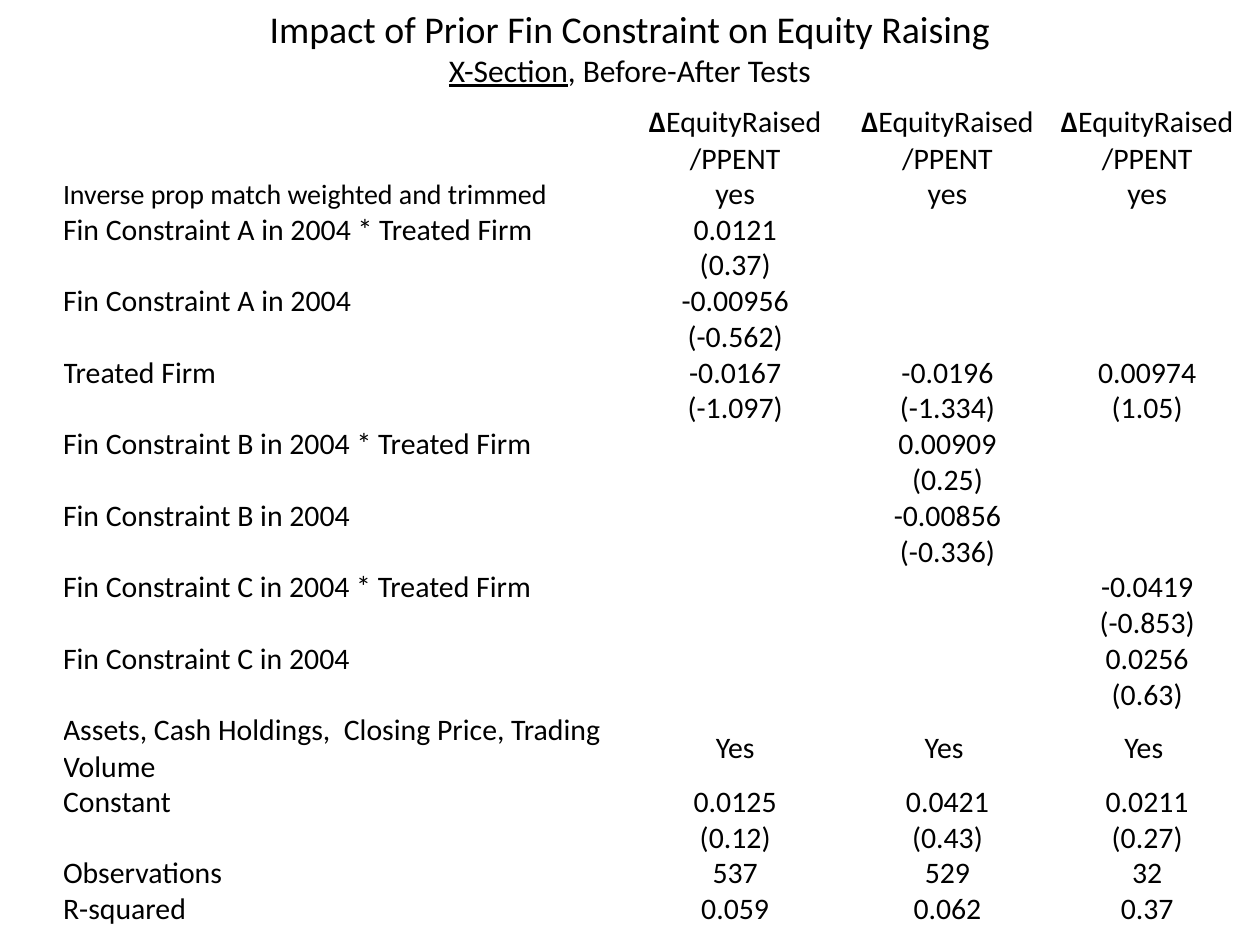
from dataclasses import dataclass

from pptx import Presentation
from pptx import util as u
from pptx.dml.color import RGBColor
from pptx.enum import text


@dataclass(frozen=True)
class Theme:
    font: str = "Calibri"
    ink: RGBColor = RGBColor(0, 0, 0)
    title: float = 21.6
    subtitle: float = 18
    body: float = 17
    note: float = 16


THEME = Theme()
COL_WIDTHS = (4.5, 1.67, 1.7, 1.47)
HEADER_HEIGHT, ROW_HEIGHT = 0.56, 0.21

MATCHING = ("Inverse prop match weighted and trimmed", "yes", "yes", "yes")
CONTROLS = ("Assets, Cash Holdings,  Closing Price, Trading Volume",
            "Yes", "Yes ", "Yes ")

# Each variable: label, coefficients, t-statistics (one per regression)
VARIABLES = [
    ("Fin Constraint A in 2004 * Treated Firm", ("0.0121", "", ""), ("(0.37)", "", "")),
    ("Fin Constraint A in 2004", ("-0.00956", "", ""), ("(-0.562)", "", "")),
    ("Treated Firm", ("-0.0167", "-0.0196", "0.00974"), ("(-1.097)", "(-1.334)", "(1.05)")),
    ("Fin Constraint B in 2004 * Treated Firm", ("", "0.00909", ""), ("", "(0.25)", "")),
    ("Fin Constraint B in 2004", ("", "-0.00856", ""), ("", "(-0.336)", "")),
    ("Fin Constraint C in 2004 * Treated Firm", ("", "", "-0.0419"), ("", "", "(-0.853)")),
    ("Fin Constraint C in 2004", ("", "", "0.0256"), ("", "", "(0.63)")),
]
CONSTANT = [("Constant", ("0.0125", "0.0421", "0.0211"), ("(0.12)", "(0.43)", "(0.27)"))]
FIT = [
    ("Observations", "537", "529", "32"),
    ("R-squared", "0.059", "0.062", "0.37"),
]


def style(font, size):
    font.name = THEME.font
    font.size = u.Pt(size)
    font.color.rgb = THEME.ink


def add_run(p, content, size=None, bold=None, underline=None):
    r = p.add_run()
    r.text = content
    if size:
        r.font.size = u.Pt(size)
    r.font.bold = bold
    r.font.underline = underline


def add_title(s):
    sp = s.shapes.add_textbox(u.Inches(0.5), 0, u.Inches(9), u.Inches(0.75))
    tf = sp.text_frame
    tf.word_wrap = True
    tf.vertical_anchor = text.MSO_ANCHOR.MIDDLE
    p = tf.paragraphs[0]
    p.alignment = text.PP_ALIGN.CENTER
    style(p.font, THEME.subtitle)
    add_run(p, "Impact of Prior Fin Constraint on Equity Raising", size=THEME.title)
    p.add_line_break()
    add_run(p, "X-Section", underline=True)
    add_run(p, ", Before-After Tests")


def format_paragraph(p, centred, size=THEME.body):
    p.alignment = text.PP_ALIGN.CENTER if centred else text.PP_ALIGN.LEFT
    style(p.font, size)


def prepare_cell(cell, anchor=text.MSO_ANCHOR.BOTTOM):
    cell.fill.background()
    cell.margin_left = cell.margin_right = cell.margin_top = cell.margin_bottom = 0
    cell.vertical_anchor = anchor


def fill_header(cells):
    for col, cell in enumerate(cells):
        prepare_cell(cell)
        tf = cell.text_frame
        p = tf.paragraphs[0]
        format_paragraph(p, centred=True)
        if col:
            add_run(p, "Δ", bold=True)
            add_run(p, "EquityRaised")
            p = tf.add_paragraph()
            format_paragraph(p, centred=True)
            add_run(p, "/PPENT")


def fill_row(cells, values):
    flagged = values in (MATCHING, CONTROLS)
    for col, (cell, value) in enumerate(zip(cells, values)):
        middle = flagged and col > 0
        prepare_cell(cell, text.MSO_ANCHOR.MIDDLE if middle else text.MSO_ANCHOR.BOTTOM)
        p = cell.text_frame.paragraphs[0]
        small = values == MATCHING and col == 0
        format_paragraph(p, col > 0, THEME.note if small else THEME.body)
        if value:
            add_run(p, value)


def estimate_rows(variables):
    """One row of coefficients and one of t-statistics per variable."""
    for label, coefficients, t_stats in variables:
        yield (label, *coefficients)
        yield ("", *t_stats)


def add_results_table(s):
    rows = [MATCHING, *estimate_rows(VARIABLES), CONTROLS,
            *estimate_rows(CONSTANT), *FIT]
    frame = s.shapes.add_table(len(rows) + 1, len(COL_WIDTHS), u.Inches(0.5),
                               u.Inches(0.83), u.Inches(9.33), u.Inches(6.5))
    table = frame.table
    table.first_row = table.horz_banding = False
    for column, width in zip(table.columns, COL_WIDTHS):
        column.width = u.Inches(width)
    for i, row in enumerate(table.rows):
        row.height = u.Inches(ROW_HEIGHT if i else HEADER_HEIGHT)
        if i:
            fill_row(row.cells, rows[i - 1])
        else:
            fill_header(row.cells)
    frame.height = u.Inches(6.5)


def main():
    prs = Presentation()
    prs.slide_width, prs.slide_height = u.Inches(10), u.Inches(7.5)
    s = prs.slides.add_slide(prs.slide_layouts[6])
    add_title(s)
    add_results_table(s)
    prs.save("out.pptx")


if __name__ == "__main__":
    main()
